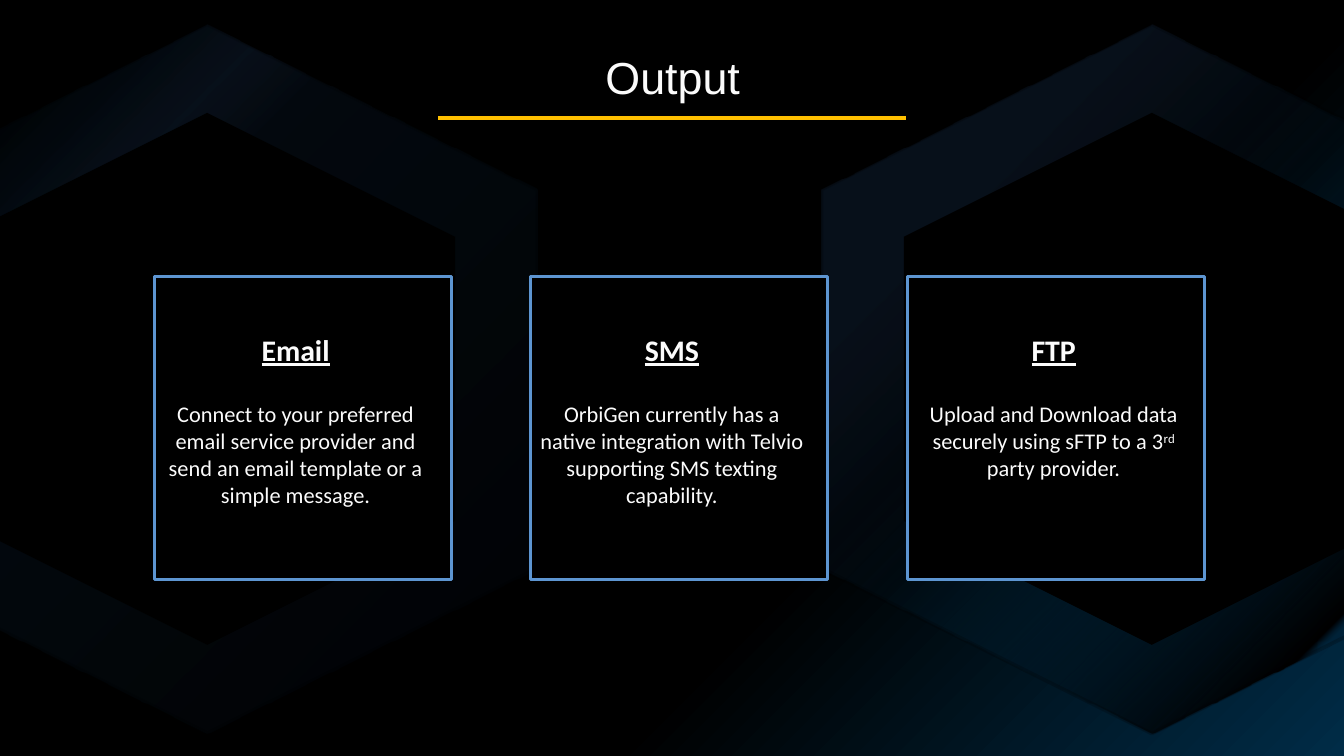
from dataclasses import dataclass

from lxml import etree
from pptx import Presentation
from pptx import util as u
from pptx.dml import color as dml
from pptx.enum import shapes, text
from pptx.oxml import ns

COLORS = {
    "black": "000000", "navy": "002C47", "ink": "001624", "sky": "519CFF",
    "blue": "295992", "border": "5D95D1", "white": "FBFBFB", "gold": "FFC000",
}


@dataclass(frozen=True)
class Stop:
    pos: int
    color: str
    opacity: int = 100


@dataclass(frozen=True)
class Hexagon:
    center_x: float
    stops: tuple[Stop, ...]


@dataclass(frozen=True)
class Card:
    heading: str
    body: tuple[str, ...]  # every second part is superscript
    text_left: float


HEXAGONS = (
    Hexagon(617, (Stop(24, "sky", 10), Stop(46, "navy", 10),
                  Stop(81, "black"), Stop(82, "ink", 10))),
    Hexagon(111, (Stop(17, "navy", 10), Stop(29, "sky", 10),
                  Stop(36, "blue", 10), Stop(100, "ink", 10))),
)
CARDS = (
    Card("Email", ("Connect to your preferred email service provider and "
                   "send an email template or a simple message.",), 79.2),
    Card("SMS", ("OrbiGen currently has a native integration with Telvio "
                 "supporting SMS texting capability.",), 280.8),
    Card("FTP", ("Upload and Download data securely using sFTP to a 3", "rd",
                 " party provider."), 485.3),
)
CARD_LEFT, CARD_TOP, CARD_W, CARD_H, CARD_PITCH = 82.8, 148.3, 159.1, 162, 201.6
TEXT_W = 158.4
HEX_CENTER_Y = 203


def rgb(name: str) -> dml.RGBColor:
    return dml.RGBColor.from_string(COLORS[name])


def add_xml(parent, tag: str, **attrs):
    return etree.SubElement(parent, ns.qn(tag), {k: str(v) for k, v in attrs.items()})


def add_color(parent, name: str, opacity: int) -> None:
    clr = add_xml(parent, "a:srgbClr", val=COLORS[name])
    if opacity < 100:
        add_xml(clr, "a:alpha", val=opacity * 1000)


def set_gradient(fill, owner, stops: tuple[Stop, ...], angle: float) -> None:
    """Fill with any number of stops; angle runs counter-clockwise."""
    fill.gradient()
    fill.gradient_angle = angle
    gs_list = owner.find(".//" + ns.qn("a:gsLst"))
    for gs in list(gs_list):
        gs_list.remove(gs)
    for stop in stops:
        add_color(add_xml(gs_list, "a:gs", pos=stop.pos * 1000), stop.color, stop.opacity)


def add_black_shape(parent, kind, left: float, top: float, width: float, height: float):
    sp = parent.add_shape(kind, u.Pt(left), u.Pt(top), u.Pt(width), u.Pt(height))
    sp.shadow.inherit = False
    sp.fill.solid()
    sp.fill.fore_color.rgb = rgb("black")
    sp.line.fill.background()
    return sp


def add_hexagon(parent, center_x: float, width: float, height: float):
    sp = add_black_shape(parent, shapes.MSO_SHAPE.HEXAGON, center_x - width / 2,
                         HEX_CENTER_Y - height / 2, width, height)
    sp.rotation = 90
    return sp


def add_hexagon_ring(s, ring: Hexagon) -> None:
    group = s.shapes.add_group_shape().shapes
    outer = add_hexagon(group, ring.center_x, 380, 354)
    set_gradient(outer.fill, outer._element, ring.stops, 45)
    outer.line.width = u.Pt(2)
    outer.line.color.rgb = rgb("black")
    line_color = outer._element.find(".//" + ns.qn("a:ln")).find(".//" + ns.qn("a:srgbClr"))
    add_xml(line_color, "a:alpha", val=20000)
    add_hexagon(group, ring.center_x, 285, 265.7)


def add_label(s, parts: tuple[str, ...], left: float, top: float, width: float,
              height: float, size: float, font: str = "Calibri",
              heading: bool = False, middle: bool = True) -> None:
    tf = s.shapes.add_textbox(u.Pt(left), u.Pt(top), u.Pt(width), u.Pt(height)).text_frame
    tf.word_wrap = True
    tf.margin_left = tf.margin_right = tf.margin_top = tf.margin_bottom = u.Pt(7.2)
    tf.vertical_anchor = text.MSO_ANCHOR.MIDDLE if middle else text.MSO_ANCHOR.TOP
    p = tf.paragraphs[0]
    p.alignment = text.PP_ALIGN.CENTER
    for i, part in enumerate(parts):
        r = p.add_run()
        r.text = part
        r.font.size = u.Pt(size)
        r.font.name = font
        r.font.color.rgb = rgb("white")
        if heading:
            r.font.bold = r.font.underline = True
        if i % 2:
            r.font._element.set("baseline", "30000")


def add_title_rule(s) -> None:
    rule = s.shapes.add_connector(shapes.MSO_CONNECTOR.STRAIGHT,
                                  u.Pt(234.7), u.Pt(63.4), u.Pt(485.3), u.Pt(63.4))
    rule.line.width = u.Pt(2)
    rule.line.color.rgb = rgb("gold")
    effects = add_xml(rule._element.spPr, "a:effectLst")
    shadow = add_xml(effects, "a:outerShdw", blurRad=u.Pt(3.1), dist=u.Pt(1.6),
                     dir=5400000, rotWithShape=0)
    add_color(shadow, "black", 38)


def main() -> None:
    prs = Presentation()
    prs.slide_width, prs.slide_height = u.Pt(720), u.Pt(405)
    s = prs.slides.add_slide(prs.slide_layouts[6])
    set_gradient(s.background.fill, s._element, (Stop(65, "black"), Stop(100, "navy")), 315)

    for ring in HEXAGONS:
        add_hexagon_ring(s, ring)
    for i, card in enumerate(CARDS):
        box = add_black_shape(s.shapes, shapes.MSO_SHAPE.RECTANGLE,
                              CARD_LEFT + i * CARD_PITCH, CARD_TOP, CARD_W, CARD_H)
        box.line.width = u.Pt(1.5)
        box.line.color.rgb = rgb("border")
        add_label(s, card.body, card.text_left, 207.4, TEXT_W, 115.2, 12, middle=False)
        add_label(s, (card.heading,), card.text_left, 172.1, TEXT_W, 30.2, 16, heading=True)

    add_label(s, ("Output",), 56.9, 28.1, 607, 25.9, 24, font="Arial")
    add_title_rule(s)
    prs.save("out.pptx")


if __name__ == "__main__":
    main()
